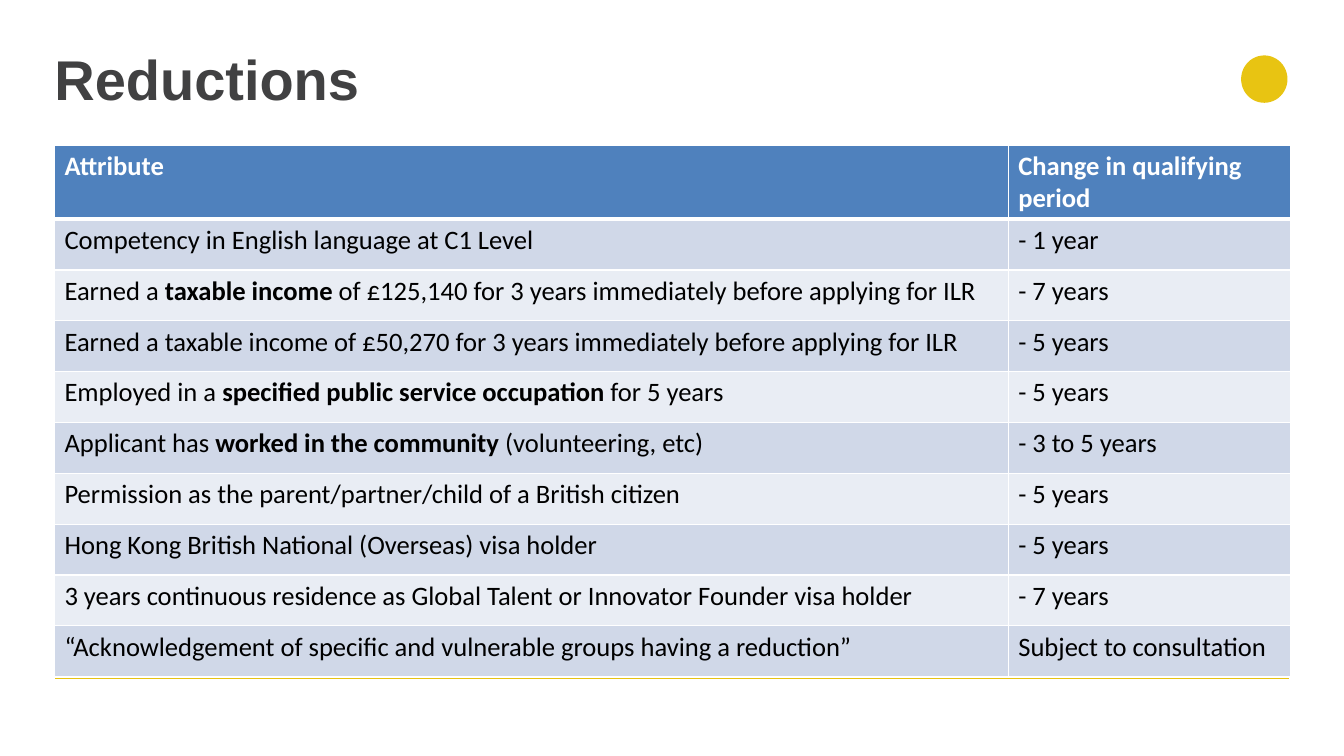
from lxml import etree
from pptx import Presentation
from pptx.dml.color import RGBColor
from pptx.enum import shapes
from pptx.oxml import ns
from pptx.util import Inches, Pt

TITLE = "Reductions"
HEADINGS = ("Attribute", "Change in qualifying period")
# Text between ** marks is bold.
REDUCTIONS = [
    ("Competency in English language at C1 Level", "- 1 year"),
    ("Earned a **taxable income **of £125,140 for 3 years immediately before applying for ILR",
     "- 7 years"),
    ("Earned a taxable income of £50,270 for 3 years immediately before applying for ILR",
     "- 5 years"),
    ("Employed in a **specified public service occupation **for 5 years", "- 5 years"),
    ("Applicant has **worked in the community** (volunteering, etc)", "- 3 to 5 years"),
    ("Permission as the parent/partner/child of a British citizen", "- 5 years"),
    ("Hong Kong British National (Overseas) visa holder", "- 5 years"),
    ("3 years continuous residence as Global Talent or Innovator Founder visa holder",
     "- 7 years"),
    ("“Acknowledgement of specific and vulnerable groups having a reduction”",
     "Subject to consultation"),
]

YELLOW, DARK, WHITE, BLACK = "E6C212", "414142", "FFFFFF", "000000"
HEADER_FILL, BANDS = "4F81BD", ("D0D8E8", "E9EDF4")
LEFT, TABLE_TOP = 0.54, 1.44
COLUMN_WIDTHS = (9.46, 2.8)
HEADER_HEIGHT, BODY_HEIGHT = 0.73, 4.54


def color(value):
    return RGBColor.from_string(value)


def style_font(font, name, size, value, bold):
    font.name, font.size, font.bold = name, Pt(size), bold
    font.color.rgb = color(value)


def set_borders(cell, bottom_width, top_width):
    properties = cell._tc.get_or_add_tcPr()
    widths = {"a:lnL": 1, "a:lnR": 1, "a:lnT": top_width, "a:lnB": bottom_width}
    for index, (tag, width) in enumerate(widths.items()):
        line = etree.Element(ns.qn(tag), w=str(Pt(width)))
        fill = etree.SubElement(line, ns.qn("a:solidFill"))
        etree.SubElement(fill, ns.qn("a:srgbClr"), val=WHITE)
        properties.insert(index, line)


def fill_cell(cell, content, row):
    header = row == 0
    cell.fill.solid()
    cell.fill.fore_color.rgb = color(HEADER_FILL if header else BANDS[(row - 1) % 2])
    set_borders(cell, 3 if header else 1, 3 if row == 1 else 1)
    paragraph = cell.text_frame.paragraphs[0]
    for index, part in enumerate(content.split("**")):
        run = paragraph.add_run()
        run.text = part
        style_font(run.font, "Calibri", 19, WHITE if header else BLACK,
                   header or index % 2 == 1)


def add_frame(slide):
    """Add the bottom rule and the round mark in the top corner."""
    rule = slide.shapes.add_connector(shapes.MSO_CONNECTOR.STRAIGHT, Inches(0.55),
                                      Inches(6.73), Inches(12.78), Inches(6.73))
    rule.line.color.rgb = color(YELLOW)
    rule.line.width = Pt(0.96)
    etree.SubElement(rule._element.spPr, ns.qn("a:effectLst"))

    mark = slide.shapes.add_shape(shapes.MSO_SHAPE.OVAL, Inches(12.31), Inches(0.55),
                                  Inches(0.46), Inches(0.47))
    mark.shadow.inherit = False
    mark.fill.solid()
    mark.fill.fore_color.rgb = color("E8C412")
    mark.line.fill.background()


def add_title(slide):
    box = slide.shapes.add_textbox(Inches(LEFT), Inches(0.44), Inches(7.42), Inches(0.69))
    frame = box.text_frame
    frame.word_wrap = True
    frame.margin_left = frame.margin_right = frame.margin_top = frame.margin_bottom = 0
    frame.text = TITLE
    style_font(frame.paragraphs[0].runs[0].font, "Arial", 40, DARK, True)


def add_reductions_table(slide):
    rows = [HEADINGS, *REDUCTIONS]
    table = slide.shapes.add_table(
        len(rows), len(HEADINGS), Inches(LEFT), Inches(TABLE_TOP),
        Inches(sum(COLUMN_WIDTHS)), Inches(HEADER_HEIGHT + BODY_HEIGHT)).table
    for column, width in zip(table.columns, COLUMN_WIDTHS):
        column.width = Inches(width)
    for row, contents in enumerate(rows):
        height = BODY_HEIGHT / len(REDUCTIONS) if row else HEADER_HEIGHT
        table.rows[row].height = Inches(height)
        for column, content in enumerate(contents):
            fill_cell(table.cell(row, column), content, row)


def main():
    presentation = Presentation()
    presentation.slide_width, presentation.slide_height = Inches(13.33), Inches(7.5)
    slide = presentation.slides.add_slide(presentation.slide_layouts[6])
    add_frame(slide)
    add_title(slide)
    add_reductions_table(slide)
    presentation.save("out.pptx")


if __name__ == "__main__":
    main()
